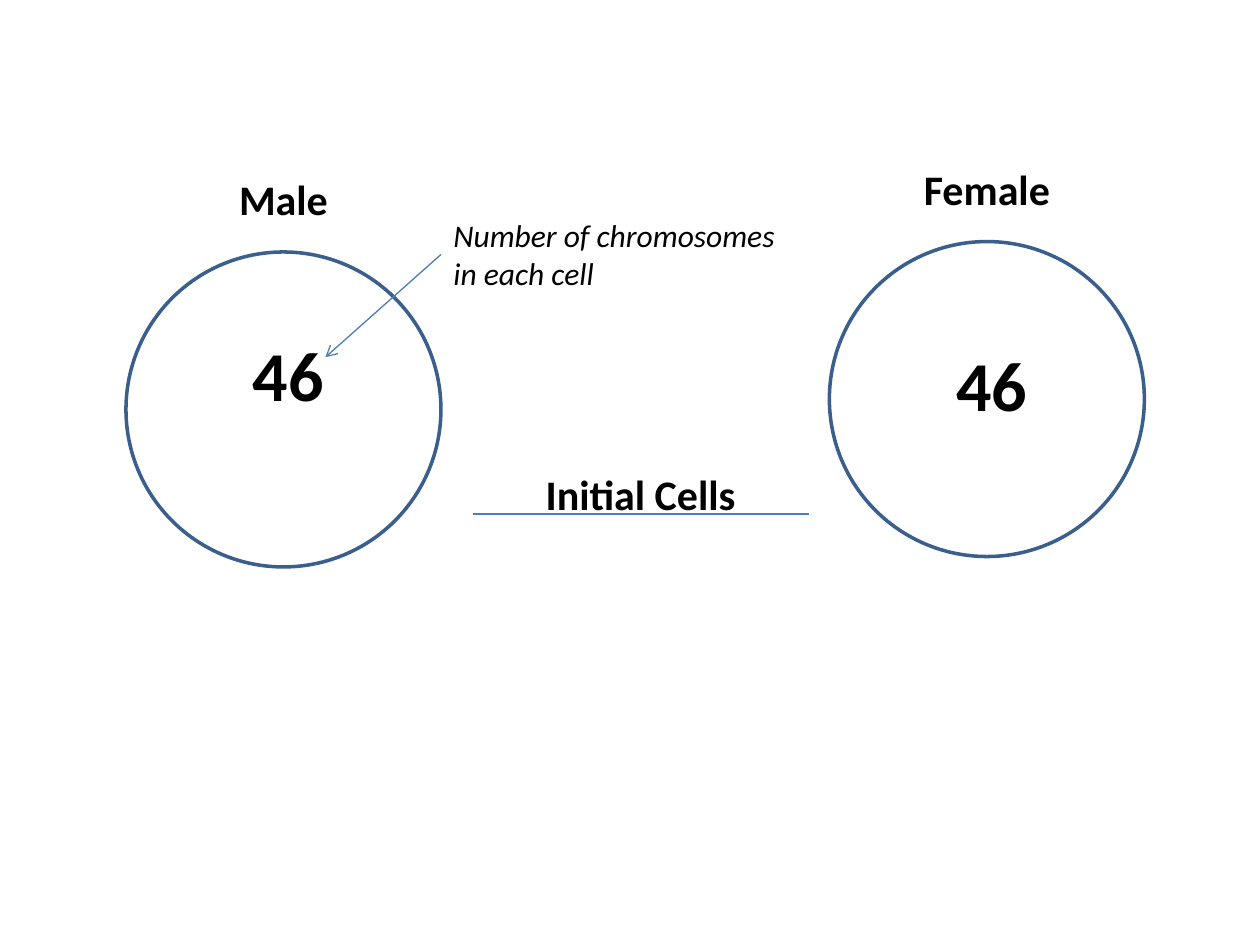
from lxml.etree import SubElement
from pptx import Presentation
from pptx.dml.color import RGBColor
from pptx.enum.shapes import MSO_CONNECTOR, MSO_SHAPE
from pptx.enum.text import MSO_AUTO_SIZE, PP_ALIGN
from pptx.oxml.ns import qn
from pptx.util import Cm, Pt

COLORS = {"cell": "FFFFFF", "outline": "3A5F8C", "line": "4B7EBC", "text": "000000"}
CELL_SIZE = 6.35


def rgb(name):
    return RGBColor.from_string(COLORS[name])


def add_text(s, text, box, size, align=PP_ALIGN.CENTER, bold=True, italic=False):
    """Place one paragraph in a (left, top, width, height) box in cm."""
    sp = s.shapes.add_textbox(*map(Cm, box))
    tf = sp.text_frame
    tf.word_wrap = True
    tf.auto_size = MSO_AUTO_SIZE.SHAPE_TO_FIT_TEXT
    p = tf.paragraphs[0]
    p.text = text
    p.alignment = align
    font = p.runs[0].font
    font.name, font.size = "Calibri", Pt(size)
    font.bold, font.italic = bold, italic
    font.color.rgb = rgb("text")
    return sp


def add_line(s, x1, y1, x2, y2):
    line = s.shapes.add_connector(MSO_CONNECTOR.STRAIGHT, *map(Cm, (x1, y1, x2, y2)))
    line.line.color.rgb = rgb("line")
    line.line.width = Pt(0.75)
    SubElement(line._element.spPr, qn("a:effectLst"))
    return line


def add_cell(s, left, top, label, count, count_offset):
    """Draw a cell with its label above and its chromosome count inside."""
    sp = s.shapes.add_shape(MSO_SHAPE.OVAL, Cm(left), Cm(top), Cm(CELL_SIZE), Cm(CELL_SIZE))
    sp.shadow.inherit = False
    sp.fill.solid()
    sp.fill.fore_color.rgb = rgb("cell")
    sp.line.color.rgb = rgb("outline")
    sp.line.width = Pt(2)
    add_text(s, count, (left + 1.27, top + count_offset, 4.01, 1.96), 40)
    add_text(s, label, (left, top - 1.7, CELL_SIZE, 1.27), 24)


def add_stage(s, left, top, width, text):
    """Draw a stage name centred over a rule."""
    add_line(s, left, top + 1.04, left + width, top + 1.04)
    add_text(s, text, (left + 0.43, top, width - 0.86, 1.27), 24)


def add_note(s, left, top, width, height, text, target):
    """Write a note with an arrow from its left side to the target point."""
    note = add_text(s, text, (left, top, width, height), 18,
                    align=PP_ALIGN.LEFT, bold=False, italic=True)
    arrow = add_line(s, left, top + height / 2, *target)
    arrow.begin_connect(note, 1)
    SubElement(arrow.line._get_or_add_ln(), qn("a:tailEnd"), type="arrow")


def main():
    prs = Presentation()
    prs.slide_width, prs.slide_height = Cm(25.4), Cm(19.05)
    s = prs.slides.add_slide(prs.slide_layouts[6])
    add_cell(s, 2.54, 5.08, "Male", "46", 1.48)
    add_cell(s, 16.72, 4.87, "Female", "46", 1.9)
    add_stage(s, 9.53, 9.32, 6.77, "Initial Cells")
    add_note(s, 8.89, 4.23, 7.2, 1.8, "Number of chromosomes in each cell", (6.56, 7.2))
    prs.save("out.pptx")


if __name__ == "__main__":
    main()
